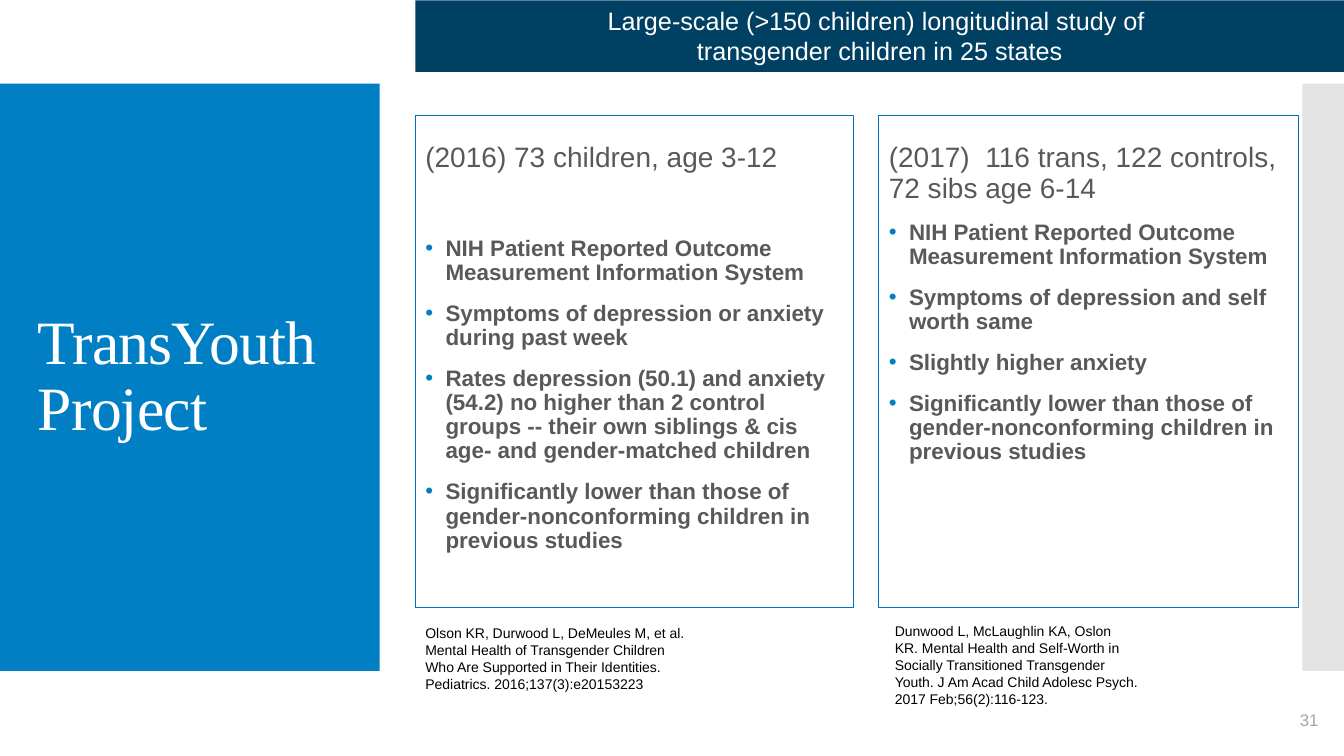
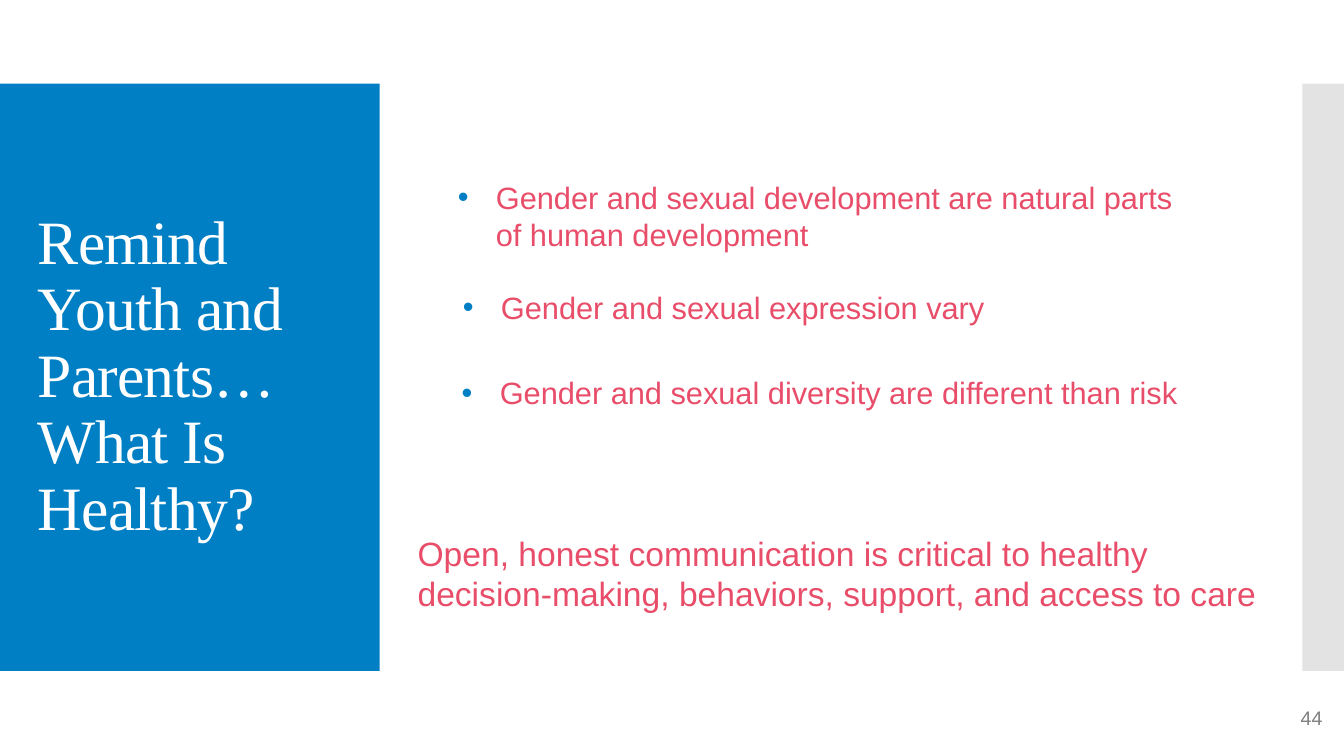
from pptx import Presentation
from pptx.dml.color import RGBColor
from pptx.enum.shapes import MSO_SHAPE
from pptx.enum.text import MSO_ANCHOR, MSO_AUTO_SIZE, PP_ALIGN
from pptx.oxml.ns import qn
from pptx.util import Cm, Pt
from lxml.etree import SubElement

BLUE = RGBColor(0x00, 0x7F, 0xC4)
OUTLINE = RGBColor(0x00, 0x70, 0xC0)
NAVY = RGBColor(0x00, 0x40, 0x62)
PALE_GREY = RGBColor(0xE3, 0xE3, 0xE3)
TEXT_GREY = RGBColor(0x59, 0x59, 0x59)
NUMBER_LIGHT = RGBColor(0xA5, 0xA4, 0xA5)
NUMBER_DARK = RGBColor(0x80, 0x80, 0x80)
PINK = RGBColor(0xE8, 0x4D, 0x69)
WHITE = RGBColor(0xFF, 0xFF, 0xFF)
BLACK = RGBColor(0x00, 0x00, 0x00)

TITLE_FONT = "Times New Roman"
BODY_FONT = "Arial"
WIDTH, HEIGHT = 33.87, 19.05
BAND_TOP, BAND_HEIGHT = 2.11, 14.8
CONTENT_LEFT = 10.47


def add_bullet(paragraph, indent):
    """Give a paragraph a blue bullet with a hanging indent in cm."""
    properties = paragraph._p.get_or_add_pPr()
    properties.set("marL", str(Cm(indent)))
    properties.set("indent", str(-Cm(indent)))
    colour = SubElement(properties, qn("a:buClr"))
    SubElement(colour, qn("a:srgbClr"), val=str(BLUE))
    SubElement(properties, qn("a:buFont"), typeface=BODY_FONT)
    SubElement(properties, qn("a:buChar"), char="•")


def write(frame, text, size=16, color=TEXT_GREY, font=BODY_FONT, bold=False,
          align=PP_ALIGN.LEFT, line=None, before=0, indent=0, tracking=0):
    """Write one paragraph, filling the empty first one before adding more."""
    paragraph = frame.paragraphs[0]
    if paragraph.runs:
        paragraph = frame.add_paragraph()
        paragraph.space_before = Pt(before)
    paragraph.alignment = align
    if line:
        paragraph.line_spacing = line
    if indent:
        add_bullet(paragraph, indent)
    run = paragraph.add_run()
    run.text = text
    run.font.name = font
    run.font.size = Pt(size)
    run.font.bold = bold
    run.font.color.rgb = color
    if tracking:
        run._r.get_or_add_rPr().set("spc", str(tracking))


def add_panel(slide, box, fill=None, outline=None, preset=MSO_SHAPE.RECTANGLE):
    """Draw a flat shape in a (left, top, width, height) box in cm."""
    panel = slide.shapes.add_shape(preset, *map(Cm, box))
    panel.shadow.inherit = False
    if fill is None:
        panel.fill.background()
    else:
        panel.fill.solid()
        panel.fill.fore_color.rgb = fill
    if outline is None:
        panel.line.fill.background()
    else:
        panel.line.color.rgb = outline
        panel.line.width = Pt(0.75)
    frame = panel.text_frame
    frame.word_wrap = True
    frame.vertical_anchor = MSO_ANCHOR.TOP
    return frame


def add_text(slide, box, text, **style):
    """Place a wrapping text box that holds one paragraph."""
    frame = slide.shapes.add_textbox(*map(Cm, box)).text_frame
    frame.word_wrap = True
    write(frame, text, **style)


def start_slide(deck, heading, title_width):
    """Add a slide with the side bands and its title on the blue one."""
    slide = deck.slides.add_slide(deck.slide_layouts[5])
    add_panel(slide, (0, BAND_TOP, 9.57, BAND_HEIGHT), fill=BLUE)
    add_panel(slide, (32.82, BAND_TOP, 1.05, BAND_HEIGHT), fill=PALE_GREY)
    title = slide.shapes.title
    title.left, title.top = Cm(0.7), Cm(3.12)
    title.width, title.height = Cm(title_width), Cm(12.78)
    frame = title.text_frame
    frame.word_wrap = True
    frame.auto_size = MSO_AUTO_SIZE.NONE
    frame.vertical_anchor = MSO_ANCHOR.MIDDLE
    write(frame, heading, size=44, color=WHITE, font=TITLE_FONT, line=0.9,
          tracking=-60)
    title.element.getparent().append(title.element)
    return slide


def add_banner(slide, box, lines):
    """Draw the navy banner with centred lines."""
    frame = add_panel(slide, box, fill=NAVY)
    for text in lines:
        write(frame, text, size=18, color=WHITE, align=PP_ALIGN.CENTER)


def add_study(slide, box, heading, findings, heading_gap, citation, citation_box):
    """Draw an outlined study panel with its citation below the lower left corner."""
    left, top, _, height = box
    frame = add_panel(slide, box, outline=OUTLINE)
    frame.margin_top = Cm(0.7)
    write(frame, heading, size=20, line=0.9)
    for index, finding in enumerate(findings):
        write(frame, finding, bold=True, line=0.9, indent=0.51,
              before=12 if index else heading_gap)
    shift, gap, width, depth = citation_box
    add_text(slide, (left + shift, top + height + gap, width, depth), citation,
             size=10, color=BLACK)


def add_message(slide, box, text, inset=0.25, **style):
    """Place a pink message in an unpainted rounded box."""
    frame = add_panel(slide, box, preset=MSO_SHAPE.ROUNDED_RECTANGLE)
    frame.margin_left = Cm(inset)
    frame.margin_top = frame.margin_bottom = Cm(0.51)
    write(frame, text, color=PINK, **style)


def build_study_slide(deck):
    """Build the slide that compares the two study reports."""
    slide = start_slide(deck, "TransYouth Project", 8.18)
    add_banner(slide, (CONTENT_LEFT, 0.01, WIDTH - CONTENT_LEFT, 1.8), [
        "Large-scale (>150 children) longitudinal study of ",
        "transgender children in 25 states",
    ])
    measure = "NIH Patient Reported Outcome Measurement Information System"
    comparison = ("Significantly lower than those of gender-nonconforming "
                  "children in previous studies")
    add_study(
        slide, (CONTENT_LEFT, 2.92, 11.04, 12.4), "(2016) 73 children, age 3-12",
        [measure,
         "Symptoms of depression or anxiety during past week",
         "Rates depression (50.1) and anxiety (54.2) no higher than 2 control "
         "groups -- their own siblings & cis age- and gender-matched children",
         comparison],
        45,
        "Olson KR, Durwood L, DeMeules M, et al. Mental Health of Transgender "
        "Children Who Are Supported in Their Identities. "
        "Pediatrics. 2016;137(3):e20153223", (0, 0.3, 7.29, 1.96))
    add_study(
        slide, (22.15, 2.92, 10.57, 12.4),
        "(2017)  116 trans, 122 controls, 72 sibs age 6-14",
        [measure,
         "Symptoms of depression and self worth same",
         "Slightly higher anxiety",
         comparison],
        12,
        "Dunwood L, McLaughlin KA, Oslon KR. Mental Health and Self-Worth in "
        "Socially Transitioned Transgender Youth. J Am Acad Child Adolesc Psych. "
        "2017 Feb;56(2):116-123.", (0.15, 0.25, 6.63, 2.39))
    add_text(slide, (31.96, 17.75, 1.52, 1.2), "31", size=12,
             color=NUMBER_LIGHT, align=PP_ALIGN.RIGHT)


def build_reminder_slide(deck):
    """Build the slide of messages for youth and parents."""
    slide = start_slide(deck, "Remind Youth and Parents…What Is Healthy?", 7.52)
    messages = [
        (11.13, 3.84, 3.23, 0.25, "Gender and sexual development are natural "
                                  "parts of human development"),
        (11.05, 6.65, 2.18, 0.51, "Gender and sexual expression vary"),
        (11.28, 8.81, 2.18, 0.25, "Gender and sexual diversity are different "
                                  "than risk"),
    ]
    for left, top, height, inset, message in messages:
        add_message(slide, (left, top, 19.35, height), message, inset=inset,
                    size=22, indent=0.96)
    add_message(slide, (10.11, 12.75, 22.3, 3.4),
                "Open, honest communication is critical to healthy "
                "decision-making, behaviors, support, and access to care",
                size=24)
    add_text(slide, (23.93, 17.67, 9.65, 1.02), "44", size=14,
             color=NUMBER_DARK, align=PP_ALIGN.RIGHT)


def main():
    """Build and save the presentation."""
    deck = Presentation()
    deck.slide_width, deck.slide_height = Cm(WIDTH), Cm(HEIGHT)
    build_study_slide(deck)
    build_reminder_slide(deck)
    deck.save("out.pptx")


if __name__ == "__main__":
    main()
